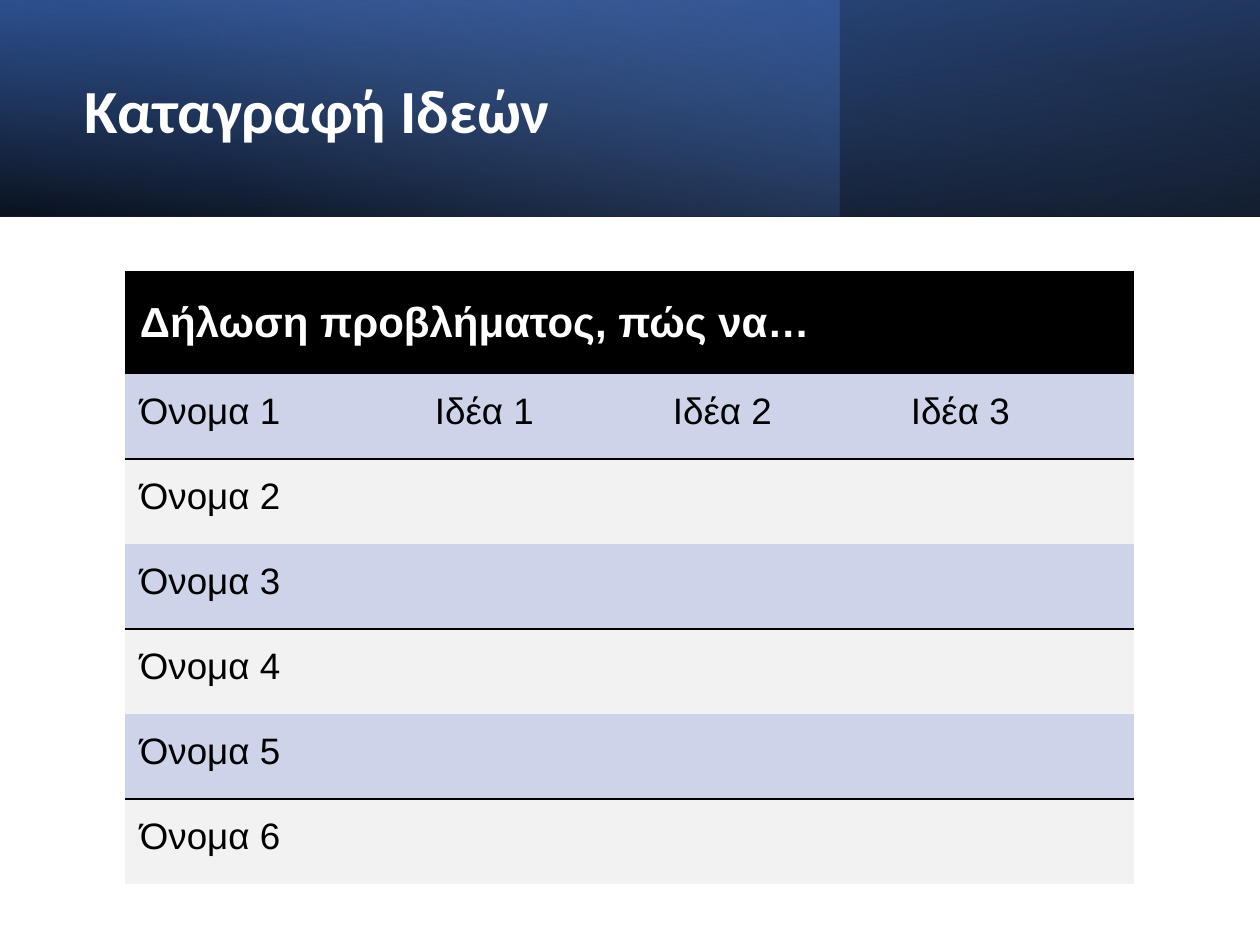
from lxml import etree
from pptx import Presentation, util as u
from pptx.dml.color import RGBColor
from pptx.enum import shapes, text
from pptx.oxml.ns import qn

PX = 914400 // 126
HEX = {"black": "000000", "white": "FFFFFF", "navy": "2F5496", "blue": "4472C4",
       "sky": "8DA9DB", "lilac": "CDD4EA", "grey": "F2F2F2"}

TITLE = "Καταγραφή Ιδεών"
HEAD = "Δήλωση προβλήματος, πώς να…"
ROWS = [["Όνομα 1", "Ιδέα 1", "Ιδέα 2", "Ιδέα 3"]]
ROWS += [[f"Όνομα {n}", "", "", ""] for n in range(2, 7)]
COLS = [295, 238, 238, 238]
HIGH = [103] + [85] * len(ROWS)

# width, turn, flipped, angle, stops of (position %, colour, opacity %)
BANDS = [
    (1260, 180, True, 100, [(0, "black", 96), (100, "navy", 100)]),
    (840, 0, False, 140, [(0, "blue", 41), (74, "sky", 0), (100, "sky", 0)]),
    (1260, 0, True, 260, [(0, "black", 63), (78, "blue", 15), (100, "blue", 15)]),
]


def px(*nums):
    return [u.Emu(n * PX) for n in nums]


def rgb(name):
    return RGBColor.from_string(HEX[name])


def sub(node, tag, **attrs):
    return etree.SubElement(node, qn("a:" + tag), {k: str(v) for k, v in attrs.items()})


def band(slide, wide, turn, flip, angle, stops):
    """Draw one see-through gradient layer of the header."""
    box = slide.shapes.add_shape(shapes.MSO_SHAPE.RECTANGLE, *px(0, 0, wide, 217))
    box.shadow.inherit = False
    box.line.fill.background()
    box.rotation = turn
    props = box._element.spPr
    if flip:
        props.find(qn("a:xfrm")).set("flipH", "1")
    grad = etree.Element(qn("a:gradFill"), rotWithShape="1")
    marks = sub(grad, "gsLst")
    for pos, tint, alpha in stops:
        mark = sub(marks, "gs", pos=pos * 1000)
        sub(sub(mark, "srgbClr", val=HEX[tint]), "alpha", val=alpha * 1000)
    sub(grad, "lin", ang=angle * 60000, scaled=0)
    props.find(qn("a:prstGeom")).addnext(grad)


def write(frame, words, size, tint, bold, face):
    para = frame.paragraphs[0]
    para.text = words
    font = para.font
    font.name, font.size, font.bold = face, u.Pt(size), bold
    font.color.rgb = rgb(tint)
    return para


def style(cell, fill, top, edge=None):
    """Fill a cell, set its insets and rule only the given edge."""
    cell.fill.solid()
    cell.fill.fore_color.rgb = rgb(fill)
    cell.vertical_anchor = text.MSO_ANCHOR.MIDDLE
    cell.margin_left, cell.margin_top, cell.margin_right, cell.margin_bottom = px(15, top, 11, 21)
    props = cell._tc.get_or_add_tcPr()
    for i, side in enumerate("LRTB"):
        line = etree.Element(qn("a:ln" + side), w="12700")
        if side == edge:
            sub(sub(line, "solidFill"), "srgbClr", val=HEX["black"])
        else:
            sub(line, "noFill")
        props.insert(i, line)


def main():
    deck = Presentation()
    deck.slide_width, deck.slide_height = px(1260, 945)
    slide = deck.slides.add_slide(deck.slide_layouts[6])
    for args in BANDS:
        band(slide, *args)

    frame = slide.shapes.add_textbox(*px(72, 34, 730, 160)).text_frame
    frame.word_wrap = True
    frame.vertical_anchor = text.MSO_ANCHOR.MIDDLE
    write(frame, TITLE, 35, "white", True, "Calibri").line_spacing = 0.9

    grid = slide.shapes.add_table(len(HIGH), len(COLS),
                                  *px(125, 271, sum(COLS), sum(HIGH))).table
    for col, wide in zip(grid.columns, px(*COLS)):
        col.width = wide
    for row, high in zip(grid.rows, px(*HIGH)):
        row.height = high

    for c in range(len(COLS)):
        style(grid.cell(0, c), "black", 21)
    grid.cell(0, 0).merge(grid.cell(0, len(COLS) - 1))
    write(grid.cell(0, 0).text_frame, HEAD, 24, "white", True, "Arial")

    for r, row in enumerate(ROWS, 1):
        fill, edge = ("lilac", "B") if r % 2 else ("grey", "T")
        for c, words in enumerate(row):
            cell = grid.cell(r, c)
            style(cell, fill, 11, edge)
            write(cell.text_frame, words, 21, "black", False, "Arial")

    deck.save("out.pptx")


if __name__ == "__main__":
    main()
